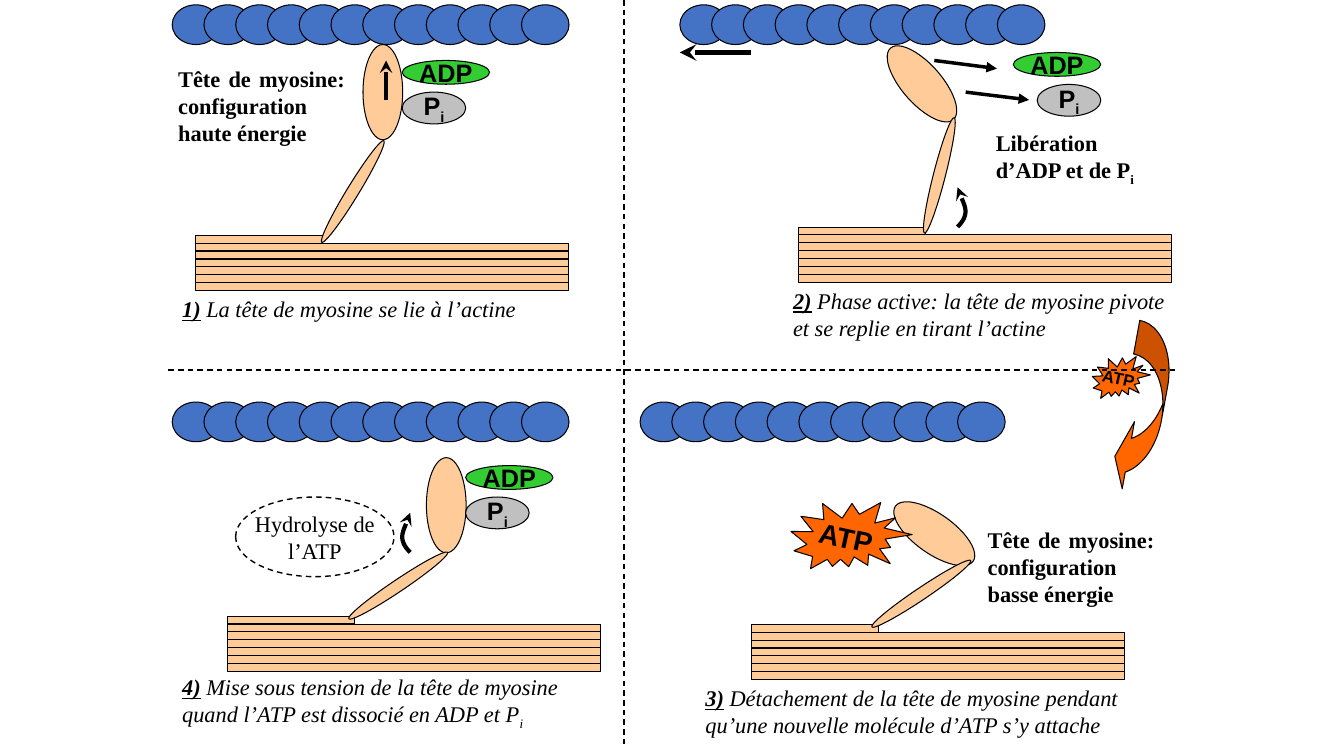
from lxml import etree
from pptx import Presentation
from pptx.dml.color import RGBColor
from pptx.enum import dml, shapes, text
from pptx.oxml.ns import qn
from pptx.util import Pt

COLORS = {
    "black": "000000",
    "actin": "4472C4",
    "myosin": "FFCC99",
    "adp": "33CC33",
    "phosphate": "C0C0C0",
    "atp": "FF6600",
}
BEAD_PITCH = 22.68
RAIL_HEIGHT = 5.67
RAIL_COUNT = 6
CURVE_STEPS = 8
KINDS = shapes.MSO_SHAPE


def color(name):
    return RGBColor.from_string(COLORS[name])


def write(paragraph, content, size=16, font="Times New Roman", bold=False,
          italic=False, underline=False, subscript=False):
    """Add one formatted run to the paragraph."""
    run = paragraph.add_run()
    run.text = content
    run.font.size = Pt(size)
    run.font.name = font
    run.font.bold = bold
    run.font.italic = italic
    run.font.underline = underline
    run.font.color.rgb = color("black")
    if subscript:
        run._r.get_or_add_rPr().set("baseline", "-25000")


def bezier(start, first, second, end):
    """Return points along a cubic curve, start excluded."""
    points = []
    for step in range(1, CURVE_STEPS + 1):
        t = step / CURVE_STEPS
        weights = ((1 - t) ** 3, 3 * t * (1 - t) ** 2, 3 * t * t * (1 - t), t ** 3)
        points.append(tuple(
            sum(w * p[axis] for w, p in zip(weights, (start, first, second, end)))
            for axis in (0, 1)))
    return points


class Diagram:
    def __init__(self, slide):
        self.slide = slide

    def stroke(self, line, width, dashed=False, head=None):
        line.color.rgb = color("black")
        line.width = Pt(width)
        if dashed:
            line.dash_style = dml.MSO_LINE.DASH
        if head:
            etree.SubElement(line._get_or_add_ln(), qn("a:tailEnd"), type=head)

    def shape(self, kind, left, top, width, height, fill=None, rotation=0,
              line_width=0.75, dashed=False):
        shape = self.slide.shapes.add_shape(
            kind, Pt(left), Pt(top), Pt(width), Pt(height))
        shape.shadow.inherit = False
        shape.rotation = rotation
        if fill:
            shape.fill.solid()
            shape.fill.fore_color.rgb = color(fill)
        else:
            shape.fill.background()
        self.stroke(shape.line, line_width, dashed)
        return shape

    def label(self, shape, *lines, subscript="", **style):
        """Centre lines of text on a shape."""
        frame = shape.text_frame
        frame.word_wrap = False
        frame.vertical_anchor = text.MSO_ANCHOR.MIDDLE
        for number, content in enumerate(lines):
            paragraph = frame.add_paragraph() if number else frame.paragraphs[0]
            paragraph.alignment = text.PP_ALIGN.CENTER
            write(paragraph, content, **style)
        if subscript:
            write(paragraph, subscript, subscript=True, **style)

    def text_box(self, left, top, width, height):
        box = self.slide.shapes.add_textbox(Pt(left), Pt(top), Pt(width), Pt(height))
        box.text_frame.word_wrap = True
        return box.text_frame.paragraphs[0]

    def caption(self, number, content, left, top, width, height=46, subscript=""):
        paragraph = self.text_box(left, top, width, height)
        write(paragraph, f"{number})", bold=True, italic=True, underline=True)
        write(paragraph, f" {content}", italic=True)
        if subscript:
            write(paragraph, subscript, italic=True, subscript=True)

    def note(self, content, left, top, height, subscript=""):
        paragraph = self.text_box(left, top, 133.2, height)
        paragraph.alignment = text.PP_ALIGN.JUSTIFY
        write(paragraph, content, bold=True)
        if subscript:
            write(paragraph, subscript, bold=True, subscript=True)

    def line(self, start, end, width, head=None, dashed=False):
        connector = self.slide.shapes.add_connector(
            shapes.MSO_CONNECTOR.STRAIGHT, *map(Pt, (*start, *end)))
        etree.SubElement(connector._element.spPr, qn("a:effectLst"))
        self.stroke(connector.line, width, dashed, head)
        # The line properties must precede the effect list.
        properties = connector._element.spPr
        properties.append(properties.find(qn("a:effectLst")))

    def pivot_arrow(self, left, bottom, bulge):
        """Draw an upward curved arrow bulging to one side."""
        start = (left, bottom)
        middle = (left + bulge, bottom - 11.3)
        end = (left, bottom - 28.3)
        points = bezier(start, (left + bulge / 2, bottom - 2.9),
                        (left + bulge, bottom - 6.5), middle)
        points += bezier(middle, (left + bulge, bottom - 15.8),
                         (left + bulge / 8, bottom - 24.5), end)
        builder = self.slide.shapes.build_freeform(Pt(start[0]), Pt(start[1]))
        builder.add_line_segments([(Pt(x), Pt(y)) for x, y in points], close=False)
        curve = builder.convert_to_shape()
        curve.shadow.inherit = False
        curve.fill.background()
        self.stroke(curve.line, 3, head="stealth")

    def actin(self, left, top, count):
        for bead in range(count):
            self.shape(KINDS.OVAL, left + bead * BEAD_PITCH, top, 34, 28.35, "actin")

    def myosin(self, filament, head, head_rotation, neck, neck_rotation):
        left, top = filament
        self.shape(KINDS.OVAL, *head, 28.35, 68, "myosin", head_rotation)
        for rail in range(1, RAIL_COUNT + 1):
            self.shape(KINDS.RECTANGLE, left, top + rail * RAIL_HEIGHT,
                       266.4, RAIL_HEIGHT, "myosin")
        self.shape(KINDS.RECTANGLE, left, top, 90.7, RAIL_HEIGHT, "myosin")
        self.shape(KINDS.OVAL, *neck, 8.6, 85, "myosin", neck_rotation)

    def adp_and_phosphate(self, adp, phosphate):
        style = dict(size=18, font="Arial", bold=True)
        self.label(self.shape(KINDS.OVAL, *adp, 62.4, 17, "adp"), "ADP", **style)
        self.label(self.shape(KINDS.OVAL, *phosphate, 45.4, 22.7, "phosphate"),
                   "P", subscript="i", **style)

    def atp(self, left, top, width, height, size):
        seal = self.shape(KINDS.EXPLOSION2, left, top, width, height, "atp", 12.4)
        self.label(seal, "ATP", size=size, font="Arial", bold=True)


def main():
    presentation = Presentation()
    presentation.slide_width, presentation.slide_height = Pt(960), Pt(540)
    diagram = Diagram(presentation.slides.add_slide(presentation.slide_layouts[6]))

    cycle_arrow = diagram.shape(KINDS.CURVED_LEFT_ARROW, 802.8, 230.4, 28.1, 123.1,
                                "atp", 10.4)
    for index, value in enumerate((0.869, 1.737, 0.333)):
        cycle_arrow.adjustments[index] = value

    # Panel 1: binding
    diagram.actin(123, 3.5, 12)
    diagram.myosin((139.6, 168), (259.3, 31.8), 0, (247.7, 94.3), 31.4)
    diagram.adp_and_phosphate((287.3, 43.2), (287.3, 65.8))
    diagram.note("Tête de myosine: configuration haute énergie", 120.2, 43.2, 65)
    diagram.caption(1, "La tête de myosine se lie à l’actine", 123, 207.4, 303.8, 26.6)
    diagram.line((275.8, 71.3), (275.8, 43.2), 3, "stealth")

    # Panel 2: power stroke
    diagram.actin(485.6, 3.5, 11)
    diagram.myosin((570.7, 162.2), (644.4, 25.9), 318.7, (666.7, 82.8), 14.4)
    diagram.adp_and_phosphate((723.8, 37.5), (740.9, 60.3))
    diagram.line((667.4, 43.2), (712.1, 49), 2.5, "triangle")
    diagram.line((689.8, 65.8), (735.1, 71.4), 2.5, "triangle")
    diagram.line((536.4, 37.5), (485.6, 37.5), 4, "stealth")
    diagram.note("Libération d’ADP et de P", 704.2, 88.9, 46, "i")
    diagram.caption(2, "Phase active: la tête de myosine pivote et se replie "
                    "en tirant l’actine", 559.4, 201.6, 283.7)
    diagram.pivot_arrow(684, 162.1, 5.7)

    # Panel 3: detachment
    diagram.actin(457.2, 287.2, 11)
    diagram.myosin((536.6, 445.9), (653.2, 347.2), 305.3, (653.8, 381.6), 56.1)
    diagram.atp(565.2, 355, 85, 56.9, 20)
    diagram.note("Tête de myosine: configuration basse énergie", 698.4, 372.2, 65)
    diagram.caption(3, "Détachement de la tête de myosine pendant qu’une nouvelle "
                    "molécule d’ATP s’y attache", 496.8, 485.3, 317.5)

    # Panel 4: re-cocking
    diagram.actin(123, 287.2, 12)
    diagram.myosin((162.5, 440.1), (304.6, 326.9), 0, (280.1, 375.8), 56.1)
    diagram.adp_and_phosphate((332.6, 332.6), (332.6, 355))
    hydrolysis = diagram.shape(KINDS.OVAL, 168.3, 355, 113.2, 56.9,
                               line_width=1, dashed=True)
    diagram.label(hydrolysis, "Hydrolyse de", "l’ATP")
    diagram.caption(4, "Mise sous tension de la tête de myosine quand l’ATP est "
                    "dissocié en ADP et P", 123, 477.4, 303.8, subscript="i")
    diagram.pivot_arrow(293, 394.6, -5.7)

    # ATP entering between panels 2 and 3, then the panel dividers
    diagram.atp(780.5, 252.7, 40.3, 34.6, 12)
    diagram.line((120.2, 264.4), (840.2, 264.4), 1, dashed=True)
    diagram.line((445.8, 0), (445.8, 534.2), 1, dashed=True)

    presentation.save("out.pptx")


if __name__ == "__main__":
    main()
